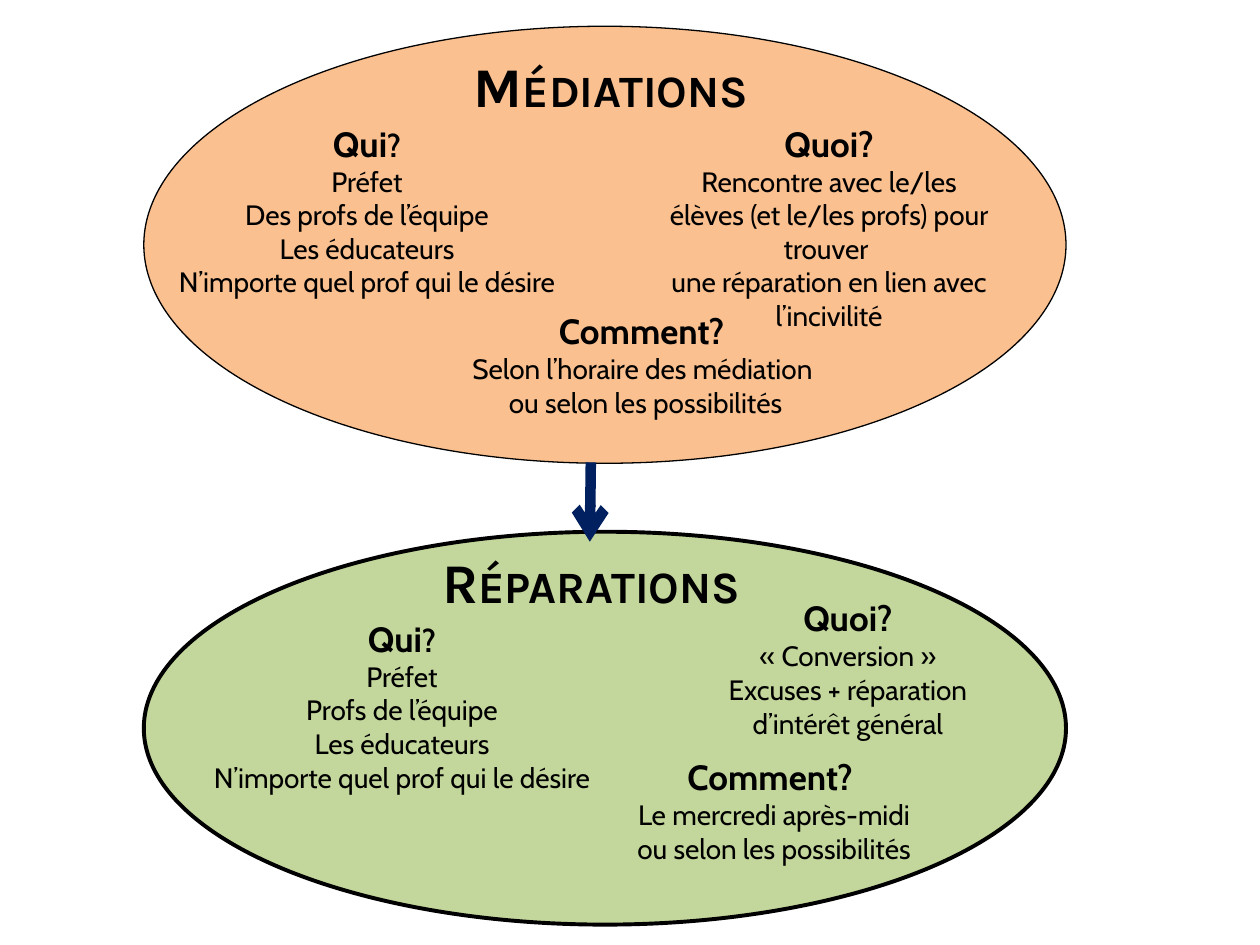
from lxml import etree
from pptx import Presentation
from pptx.dml.color import RGBColor
from pptx.enum.shapes import MSO_CONNECTOR, MSO_SHAPE
from pptx.enum.text import MSO_ANCHOR, MSO_AUTO_SIZE, PP_ALIGN
from pptx.oxml.ns import qn
from pptx.util import Cm, Pt

ELLIPSE = MSO_SHAPE.OVAL
STRAIGHT = MSO_CONNECTOR.STRAIGHT
CENTER = PP_ALIGN.CENTER
TOP = MSO_ANCHOR.TOP
FIT_SHAPE = MSO_AUTO_SIZE.SHAPE_TO_FIT_TEXT
TITLE_ONLY = 5


def rgb(value):
    return RGBColor.from_string(value)


def add_text(p, text, font="Cabin", size=16, bold=False, color="000000", small_caps=False):
    r = p.add_run()
    r.text = text
    r.font.name = font
    r.font.size = Pt(size)
    r.font.bold = bold
    r.font.color.rgb = rgb(color)
    if small_caps:
        r.font._element.set("cap", "small")


class SlideBuilder:
    black = "000000"
    navy = "002060"
    heading_font = "Karla"

    def __init__(self, prs):
        self.s = prs.slides.add_slide(prs.slide_layouts[TITLE_ONLY])

    def ellipse(self, box, fill, weight):
        sp = self.s.shapes.add_shape(ELLIPSE, *map(Cm, box))
        sp.shadow.inherit = False
        sp.fill.solid()
        sp.fill.fore_color.rgb = rgb(fill)
        sp.line.color.rgb = rgb(self.black)
        sp.line.width = Pt(weight)

    def frame(self, sp, box):
        sp.left, sp.top, sp.width, sp.height = map(Cm, box)
        tf = sp.text_frame
        tf.word_wrap = True
        tf.auto_size = FIT_SHAPE
        tf.vertical_anchor = TOP
        tf.paragraphs[0].alignment = CENTER
        return tf

    def textbox(self, box):
        return self.frame(self.s.shapes.add_textbox(*map(Cm, box)), box)

    def heading(self, tf, text):
        add_text(tf.paragraphs[0], text, font=self.heading_font, size=32,
                 bold=True, small_caps=True)

    def title(self, box, text):
        sp = self.s.shapes.title
        self.s.shapes._spTree.append(sp._element)
        self.heading(self.frame(sp, box), text)

    def subtitle(self, box, text):
        self.heading(self.textbox(box), text)

    def block(self, box, question, lines):
        tf = self.textbox(box)
        for text, size in question:
            add_text(tf.paragraphs[0], text, size=size, bold=True)
        for line in lines:
            p = tf.add_paragraph()
            p.alignment = CENTER
            add_text(p, line)

    def arrow(self, x1, y1, x2, y2):
        line = self.s.shapes.add_connector(STRAIGHT, Cm(x1), Cm(y1), Cm(x2), Cm(y2))
        line.line.color.rgb = rgb(self.navy)
        line.line.width = Pt(6)
        etree.SubElement(line.line._get_or_add_ln(), qn("a:tailEnd"), type="arrow")
        etree.SubElement(line._element.spPr, qn("a:effectLst"))


def main():
    prs = Presentation()
    prs.slide_width, prs.slide_height = Cm(25.4), Cm(19.05)
    b = SlideBuilder(prs)

    who = [("Qui", 20), ("?", 18)]
    what = [("Quoi?", 20)]
    how = [("Comment? ", 20)]
    anyone = ["Les éducateurs", "N’importe quel prof qui le désire"]
    if_possible = "ou selon les possibilités"

    b.ellipse((2.9, 0.53, 18.59, 8.81), "FAC090", 0.75)
    b.block((3.3, 2.34, 8.2, 3.84), who, ["Préfet", "Des profs de l’équipe", *anyone])
    b.block((13.11, 2.34, 7.21, 4.52), what, [
        "Rencontre avec le/les élèves (et le/les profs) pour trouver ",
        "une réparation en lien avec l’incivilité",
    ])
    b.block((8.71, 6.12, 8.61, 2.49), how, ["Selon l’horaire des médiation ", if_possible])
    b.title((8.71, 0.91, 7.21, 1.63), "Médiations")

    b.ellipse((2.9, 10.72, 18.59, 7.92), "C3D69B", 2.25)
    b.block((3.51, 12.32, 9.19, 3.84), who, ["Préfet", "Profs de l’équipe", *anyone])
    b.block((13.49, 11.91, 7.21, 3.18), what, [
        "« Conversion »",
        "Excuses + réparation d’intérêt général",
    ])
    b.block((11.3, 15.11, 8.61, 2.49), how, ["Le mercredi après-midi", if_possible])
    b.subtitle((8.31, 10.92, 7.21, 1.63), "Réparations")

    b.arrow(11.91, 9.32, 11.89, 10.92)
    prs.save("out.pptx")


if __name__ == "__main__":
    main()
